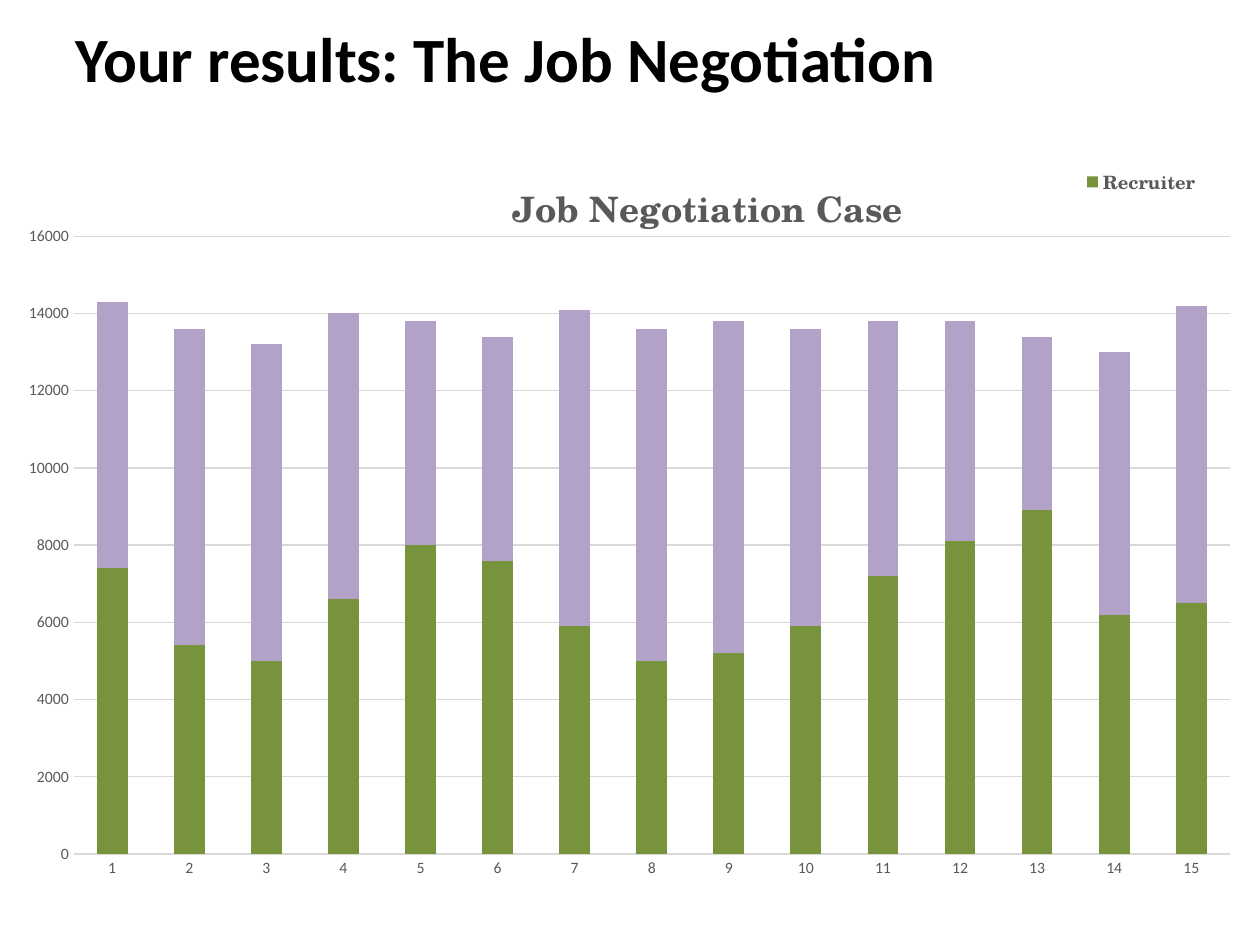
from dataclasses import dataclass

from lxml.etree import SubElement
from pptx import Presentation
from pptx.chart.data import CategoryChartData
from pptx.dml.color import RGBColor
from pptx.enum.chart import XL_CHART_TYPE as ChartType
from pptx.enum.chart import XL_LEGEND_POSITION as LegendPosition
from pptx.enum.chart import XL_TICK_MARK as TickMark
from pptx.enum.text import MSO_ANCHOR as Anchor
from pptx.enum.text import PP_ALIGN as Align
from pptx.oxml.ns import qn
from pptx.util import Pt

BODY_FONT = "Calibri"
CHART_FONT = "TeX Gyre Schola"
GREY = "595959"


@dataclass(frozen=True)
class Role:
    name: str
    color: str
    scores: tuple[int, ...]


ROLES = (
    Role("Recruiter", "77933C", (7400, 5400, 5000, 6600, 8000, 7600, 5900, 5000,
                                 5200, 5900, 7200, 8100, 8900, 6200, 6500)),
    Role("Candidate", "B3A2C7", (6900, 8200, 8200, 7400, 5800, 5800, 8200, 8600,
                                 8600, 7700, 6600, 5700, 4500, 6800, 7700)),
)


def rgb(value: str) -> RGBColor:
    return RGBColor.from_string(value)


def style_font(font, *, size: float, color: str, name: str = BODY_FONT,
               bold: bool = False) -> None:
    font.name, font.size, font.bold = name, Pt(size), bold
    font.color.rgb = rgb(color)


def write(frame, text: str, *, align=None, **style) -> None:
    para = frame.paragraphs[0]
    para.alignment = align
    span = para.add_run()
    span.text = text
    style_font(span.font, **style)


def place(element, before: str, *, inner: bool = False, **fractions: float) -> None:
    """Set a manual layout, in fractions of the chart's size."""
    for old in element.findall(qn("c:layout")):
        element.remove(old)
    layout = SubElement(element, qn("c:layout"))
    manual = SubElement(layout, qn("c:manualLayout"))
    if inner:
        SubElement(manual, qn("c:layoutTarget")).set("val", "inner")
    for side in ("x", "y"):
        SubElement(manual, qn(f"c:{side}Mode")).set("val", "edge")
    for side, value in fractions.items():
        SubElement(manual, qn(f"c:{side}")).set("val", str(value))
    element.find(qn(before)).addprevious(layout)


def style_axis(axis) -> None:
    axis.major_tick_mark = axis.minor_tick_mark = TickMark.NONE
    axis.format.line.fill.background()
    style_font(axis.tick_labels.font, size=9, color=GREY)


def add_results_chart(page) -> None:
    data = CategoryChartData()
    data.categories = [str(n) for n in range(1, len(ROLES[0].scores) + 1)]
    for role in ROLES:
        data.add_series(role.name, role.scores)
    chart = page.shapes.add_chart(ChartType.COLUMN_STACKED, Pt(16.5), Pt(75.5),
                                  Pt(687), Pt(438), data).chart
    style_font(chart.font, size=10, color="000000")

    # Columns
    plot = chart.plots[0]
    plot.gap_width, plot.overlap, plot.vary_by_categories = 150, 100, False
    for series, role in zip(plot.series, ROLES):
        series.format.fill.solid()
        series.format.fill.fore_color.rgb = rgb(role.color)
    place(plot._element.getparent(), "c:barChart", inner=True,
          x=0.034, y=0.136, w=0.965, h=0.806)

    # Axes and gridlines
    values = chart.value_axis
    for axis in (chart.category_axis, values):
        style_axis(axis)
    values.minimum_scale, values.maximum_scale, values.major_unit = 0, 16000, 2000
    grid = values.major_gridlines.format.line
    grid.width = Pt(0.75)
    grid.color.rgb = rgb("D9D9D9")

    # Chart title
    chart.has_title = True
    write(chart.chart_title.text_frame, "Job Negotiation Case", size=20,
          color=GREY, name=CHART_FONT, bold=True)
    place(chart.chart_title._element, "c:overlay", x=0.395, y=0.05)

    # Legend, with the recruiter's entry only
    chart.has_legend = True
    legend = chart.legend
    legend.position = LegendPosition.BOTTOM
    legend.include_in_layout = False
    style_font(legend.font, size=10.5, color=GREY, name=CHART_FONT, bold=True)
    place(legend._element, "c:overlay", x=0.86, y=0.04, w=0.13, h=0.05)
    entry = SubElement(legend._element, qn("c:legendEntry"))
    SubElement(entry, qn("c:idx")).set("val", "1")
    SubElement(entry, qn("c:delete")).set("val", "1")
    legend._element.find(qn("c:layout")).addprevious(entry)


def main() -> None:
    deck = Presentation()
    deck.slide_width, deck.slide_height = Pt(720), Pt(540)
    page = deck.slides.add_slide(deck.slide_layouts.get_by_name("Title Only"))

    # Slide title
    box = page.shapes.title
    box.left, box.top, box.width, box.height = Pt(36), Pt(-12), Pt(648), Pt(90)
    box.text_frame.vertical_anchor = Anchor.MIDDLE
    write(box.text_frame, "Your results: The Job Negotiation", align=Align.LEFT,
          size=36, color="000000", bold=True)

    add_results_chart(page)
    deck.save("out.pptx")


if __name__ == "__main__":
    main()
